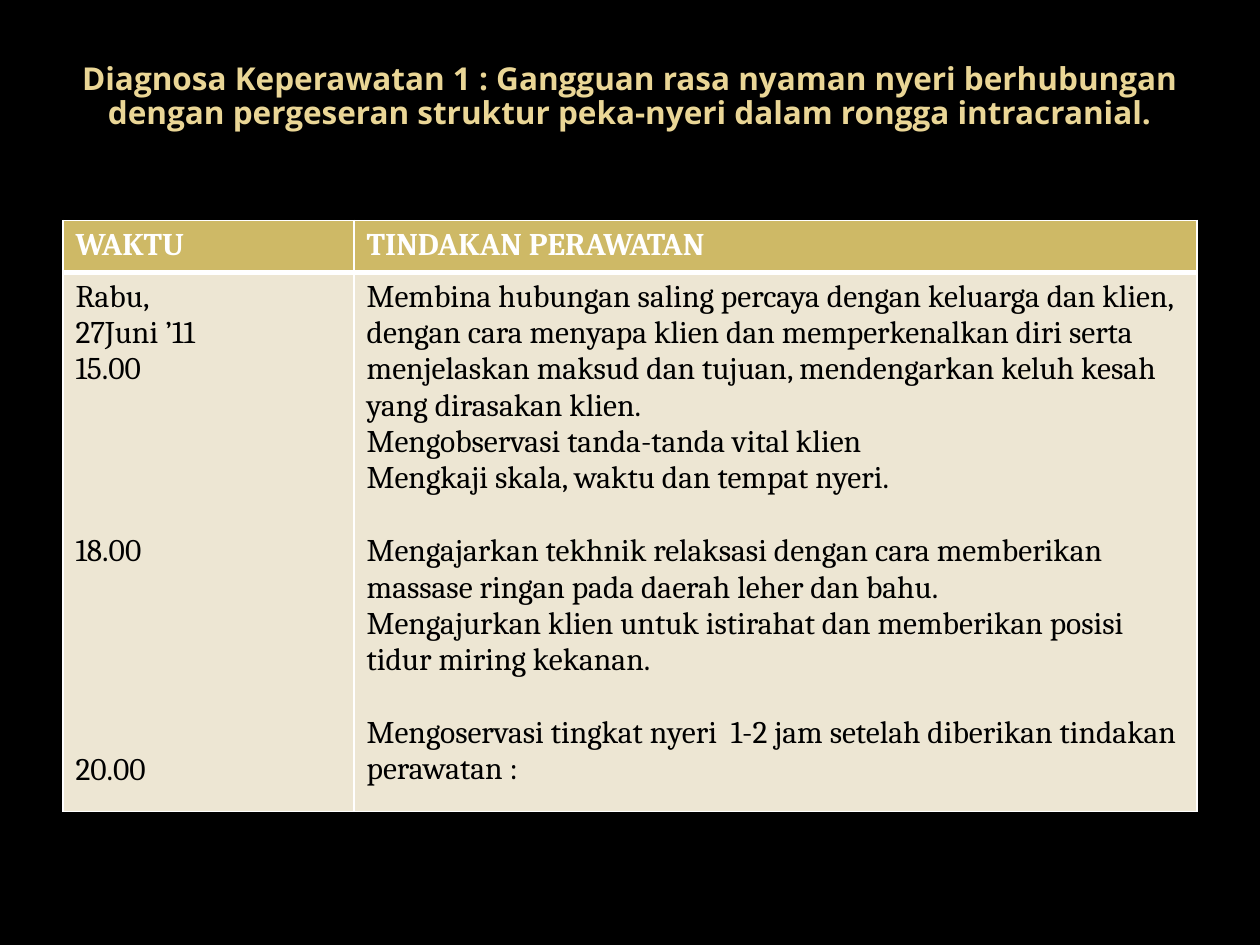
"""Build a nursing care slide with a title and a table of timed actions."""
from dataclasses import dataclass

from lxml.etree import SubElement as Sub
from pptx import Presentation as Deck
from pptx.dml.color import RGBColor as Rgb
from pptx.enum.text import MSO_ANCHOR as Anchor, PP_ALIGN as Align
from pptx.oxml.ns import qn
from pptx.util import Inches, Pt

HUES = {"back": "000000", "title": "EAD696", "head": "CEB966",
        "body": "EDE6D3", "rule": "FFFFFF", "light": "FFFFFF", "dark": "000000"}
WIDE, HIGH = Inches(10), Inches(7.5)
SIZE = Pt(18)
PITCH = 20.8
COLS = (0.231, 0.669)
ROWS = (0.055, 0.552)


@dataclass(frozen=True)
class Line:
    text: str
    skip: int = 0


@dataclass(frozen=True)
class Style:
    face: str
    ink: str
    bold: bool = False


@dataclass(frozen=True)
class Band:
    fill: str
    style: Style
    edges: dict[str, int]
    cells: tuple[tuple[Line, ...], ...]


TITLE = Line("Diagnosa Keperawatan 1 : Gangguan rasa nyaman nyeri berhubungan "
             "dengan pergeseran struktur peka-nyeri dalam rongga intracranial.")
BANDS = (
    Band("head", Style("Cambria", "light", True), {"L": 1, "R": 1, "T": 1, "B": 3},
         ((Line("WAKTU"),), (Line("TINDAKAN PERAWATAN"),))),
    Band("body", Style("Cambria", "dark"), {"L": 1, "R": 1, "T": 3, "B": 1}, (
        (Line("Rabu,"), Line("27Juni ’11"), Line("15.00"),
         Line("18.00", 4), Line("20.00", 5)),
        (Line("Membina hubungan saling percaya dengan keluarga dan klien, "
              "dengan cara menyapa klien dan memperkenalkan diri serta "
              "menjelaskan maksud dan tujuan, mendengarkan keluh kesah "
              "yang dirasakan klien."),
         Line("Mengobservasi tanda-tanda vital klien"),
         Line("Mengkaji skala, waktu dan tempat nyeri."),
         Line("Mengajarkan tekhnik relaksasi dengan cara memberikan "
              "massase ringan pada daerah leher dan bahu.", 1),
         Line("Mengajurkan klien untuk istirahat dan memberikan posisi "
              "tidur miring kekanan."),
         Line("Mengoservasi tingkat nyeri  1-2 jam setelah diberikan "
              "tindakan perawatan :", 1)))),
)


def tint(name: str) -> Rgb:
    return Rgb.from_string(HUES[name])


def write(frame, lines: tuple[Line, ...], style: Style) -> None:
    frame.text = "\n".join(line.text for line in lines)
    for para, line in zip(frame.paragraphs, lines):
        if line.skip:
            para.space_before = Pt(line.skip * PITCH)
        for run in para.runs:
            font = run.font
            font.name, font.size, font.bold = style.face, SIZE, style.bold
            font.color.rgb = tint(style.ink)


def edge(cell, edges: dict[str, int]) -> None:
    props = cell._tc.get_or_add_tcPr()
    for spot, (side, width) in enumerate(edges.items()):
        rule = Sub(props, qn(f"a:ln{side}"), w=str(Pt(width)))
        Sub(Sub(rule, qn("a:solidFill")), qn("a:srgbClr"), val=HUES["rule"])
        props.insert(spot, rule)


def draw_title(slide) -> None:
    box = slide.shapes.add_textbox(int(WIDE * 0.05), 0, int(WIDE * 0.9), Inches(1.55))
    frame = box.text_frame
    frame.word_wrap = True
    frame.vertical_anchor = Anchor.MIDDLE
    write(frame, (TITLE,), Style("Open Sans", "title", True))
    para = frame.paragraphs[0]
    para.alignment = Align.CENTER
    para.line_spacing = 0.9


def draw_table(slide, bands: tuple[Band, ...]) -> None:
    grid = slide.shapes.add_table(
        len(ROWS), len(COLS), int(WIDE * 0.05), Inches(1.75),
        int(WIDE * sum(COLS)), int(HIGH * sum(ROWS))).table
    for col, share in zip(grid.columns, COLS):
        col.width = int(WIDE * share)
    for row, share, band in zip(grid.rows, ROWS, bands):
        row.height = int(HIGH * share)
        for cell, lines in zip(row.cells, band.cells):
            cell.fill.solid()
            cell.fill.fore_color.rgb = tint(band.fill)
            edge(cell, band.edges)
            write(cell.text_frame, lines, band.style)


def main() -> None:
    deck = Deck()
    deck.slide_width, deck.slide_height = WIDE, HIGH
    slide = deck.slides.add_slide(deck.slide_layouts[6])
    slide.background.fill.solid()
    slide.background.fill.fore_color.rgb = tint("back")
    draw_title(slide)
    draw_table(slide, BANDS)
    deck.save("out.pptx")


if __name__ == "__main__":
    main()
